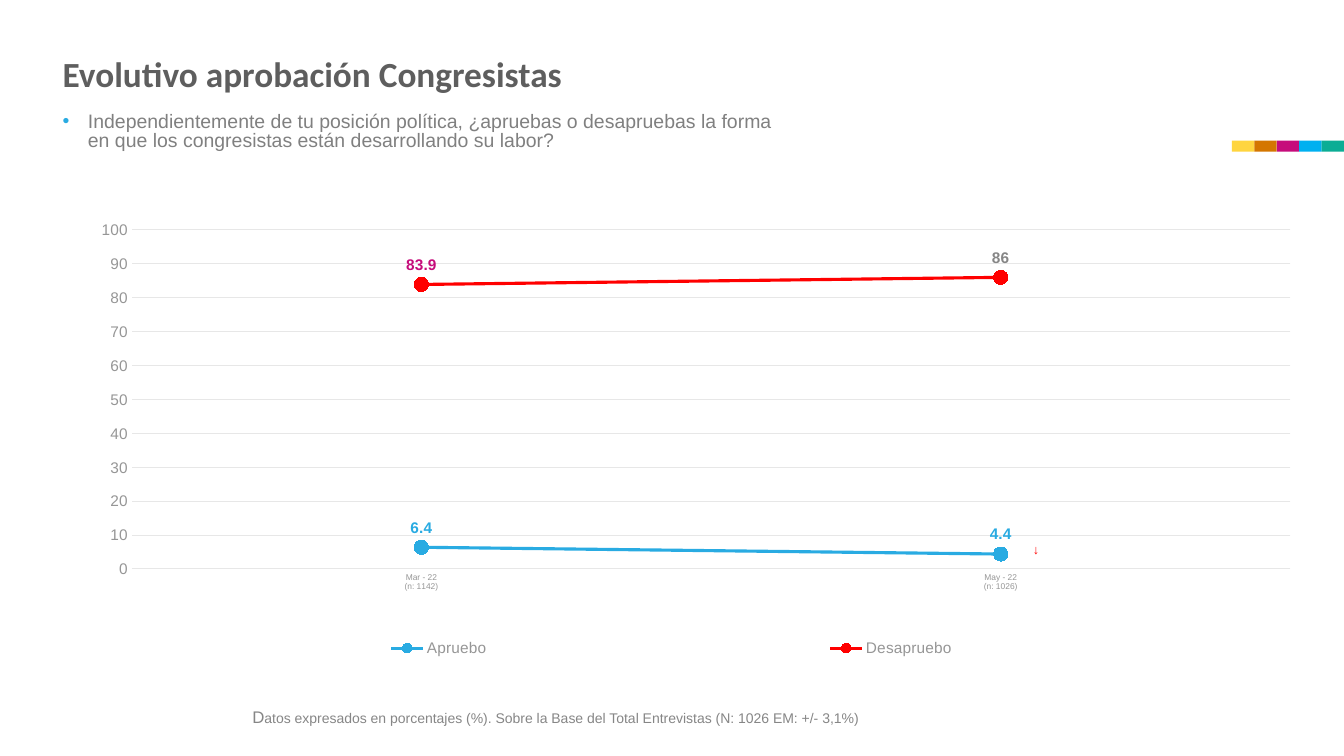
from lxml.etree import SubElement
from pptx import Presentation
from pptx.chart.data import CategoryChartData
from pptx.dml.color import RGBColor
from pptx.enum.chart import XL_CHART_TYPE as ChartType, XL_LABEL_POSITION as LabelPosition
from pptx.enum.chart import XL_LEGEND_POSITION as LegendPosition, XL_MARKER_STYLE as Marker
from pptx.enum.chart import XL_TICK_MARK as Tick
from pptx.enum.shapes import MSO_SHAPE as Shape
from pptx.enum.text import MSO_ANCHOR as Anchor, MSO_AUTO_SIZE as AutoSize, PP_ALIGN as Align
from pptx.oxml.ns import qn
from pptx.util import Inches, Pt

WIDTH, HEIGHT = 13.33, 7.5
COLUMNS, ROWS = 120, 75
DARK = RGBColor(0x5E, 0x5E, 0x5E)
GRAY = RGBColor(0x80, 0x80, 0x80)
NOTE = RGBColor(0x86, 0x86, 0x86)
AXIS = RGBColor(0x96, 0x96, 0x96)
GRID = RGBColor(0xE7, 0xE7, 0xE7)
SILVER = RGBColor(0xDD, 0xDD, 0xDD)
WHITE = RGBColor(0xFF, 0xFF, 0xFF)
BLUE = RGBColor(0x29, 0xAB, 0xE2)
RED = RGBColor(0xFF, 0x00, 0x00)
MAGENTA = RGBColor(0xC6, 0x0C, 0x7B)
TEAL = RGBColor(0x0B, 0xAD, 0x95)
STRIPES = (RGBColor(0xFF, 0xD5, 0x3F), RGBColor(0xD4, 0x76, 0x00), MAGENTA,
           RGBColor(0x00, 0xB0, 0xF0), TEAL)


class SurveySlide:
    """Draws survey elements on one slide, placed by grid columns and rows."""

    def __init__(self, deck):
        self.page = deck.slides.add_slide(deck.slide_layouts[1])
        self.shapes = self.page.shapes

    def place(self, column, row, columns, rows):
        across, down = WIDTH / COLUMNS, HEIGHT / ROWS
        return (Inches(column * across), Inches(row * down),
                Inches(columns * across), Inches(rows * down))

    def style(self, font, size, color, bold=False, name="Arial"):
        font.name, font.bold = name, bold
        font.color.rgb = color
        if size:
            font.size = Pt(size)

    def fill_placeholder(self, box, area, text, line_spacing):
        box.left, box.top, box.width, box.height = self.place(*area)
        frame = box.text_frame
        frame.text = text
        frame.word_wrap, frame.auto_size = True, AutoSize.NONE
        frame.vertical_anchor = Anchor.TOP
        para = frame.paragraphs[0]
        para.alignment, para.space_before = Align.LEFT, Pt(0)
        para.line_spacing = line_spacing
        return para

    def title(self, area, text):
        para = self.fill_placeholder(self.shapes.title, area, text, 0.9)
        self.style(para.font, 25.2, DARK, True, "Calibri")

    def question(self, area, text):
        para = self.fill_placeholder(self.page.placeholders[1], area, text, 0.8)
        props = para._p.get_or_add_pPr()
        props.set("marL", str(Inches(0.25)))
        props.set("indent", str(Inches(-0.25)))
        tint = SubElement(props, qn("a:buClr"))
        SubElement(tint, qn("a:srgbClr")).set("val", str(BLUE))
        SubElement(props, qn("a:buChar")).set("char", "•")
        self.style(para.font, 13.9, GRAY)

    def stripes(self, column, row, columns, rows, colors):
        for index, color in enumerate(colors):
            area = self.place(column + index * columns, row, columns, rows)
            stripe = self.shapes.add_shape(Shape.RECTANGLE, *area)
            stripe.shadow.inherit = False
            stripe.fill.solid()
            stripe.fill.fore_color.rgb = color
            stripe.line.fill.background()

    def set_layout(self, element, shares, inner=False):
        layout = element.find(qn("c:layout"))
        if layout is None:
            layout = SubElement(element, qn("c:layout"))
            anchor = element.find(qn("c:legendPos"))
            if anchor is None:
                element.insert(0, layout)
            else:
                anchor.addnext(layout)
        manual = SubElement(layout, qn("c:manualLayout"))
        values = [("layoutTarget", "inner")] if inner else []
        values += [("xMode", "edge"), ("yMode", "edge"), *zip("xywh", shares)]
        for tag, value in values:
            SubElement(manual, qn(f"c:{tag}")).set("val", str(value))

    def line_chart(self, area, categories, series):
        data = CategoryChartData()
        data.categories = categories
        for name, values, *_ in series:
            data.add_series(name, values)
        chart = self.shapes.add_chart(
            ChartType.LINE_MARKERS, *self.place(*area), data).chart
        chart.has_title = False
        self.style(chart.font, 11, DARK)
        self.axes(chart)
        self.legend(chart, [index for index, item in enumerate(series) if not item[-1]])
        plot = chart.plots[0]
        plot.vary_by_categories = False
        self.set_layout(chart._chartSpace.chart.plotArea, (0.064, 0.104, 0.936, 0.698), True)
        for line, (_, _, *colors) in zip(plot.series, series):
            self.series(line, *colors)
        return plot

    def legend(self, chart, unlisted):
        chart.has_legend = True
        legend = chart.legend
        legend.position, legend.include_in_layout = LegendPosition.BOTTOM, False
        self.style(legend.font, 11, AXIS)
        self.set_layout(legend._element, (0, 0.93, 1, 0.07))
        for index in unlisted:
            entry = SubElement(legend._element, qn("c:legendEntry"))
            SubElement(entry, qn("c:idx")).set("val", str(index))
            SubElement(entry, qn("c:delete")).set("val", "1")
            legend._element.find(qn("c:layout")).addprevious(entry)

    def axes(self, chart):
        for axis, size in ((chart.category_axis, 6), (chart.value_axis, 11)):
            axis.major_tick_mark = axis.minor_tick_mark = Tick.NONE
            self.style(axis.tick_labels.font, size, AXIS)
        scale = chart.value_axis
        scale.minimum_scale, scale.maximum_scale, scale.major_unit = 0, 100, 10
        scale.format.line.fill.background()
        for line in (scale.major_gridlines.format.line, chart.category_axis.format.line):
            line.color.rgb, line.width = GRID, Pt(0.75)

    def series(self, line, color, marker_color, label_color):
        line.smooth = False
        line.format.line.color.rgb, line.format.line.width = color, Pt(2.25)
        line.marker.style, line.marker.size = Marker.CIRCLE, 10
        line.marker.format.fill.solid()
        line.marker.format.fill.fore_color.rgb = marker_color
        line.marker.format.line.color.rgb = marker_color
        if label_color:
            labels = line.data_labels
            labels.show_value, labels.position = True, LabelPosition.ABOVE
            self.style(labels.font, 11, label_color, True)

    def highlight(self, point, color):
        label = point.data_label
        self.style(label.font, 11, color, True)
        label.position = LabelPosition.ABOVE

    def trend_table(self, column, row, symbol, color):
        table = self.shapes.add_table(1, 1, *self.place(column, row, 3.51, 11)).table
        table.first_row = table.horz_banding = False
        cell = table.cell(0, 0)
        cell.text, cell.vertical_anchor = symbol, Anchor.MIDDLE
        props = cell._tc.get_or_add_tcPr()
        for side in ("lnL", "lnR", "lnT", "lnB"):
            SubElement(SubElement(props, qn(f"a:{side}")), qn("a:noFill"))
        cell.fill.background()
        para = cell.text_frame.paragraphs[0]
        para.alignment = Align.CENTER
        self.style(para.font, 9, color, True)

    def footnote(self, area, spans):
        frame = self.shapes.add_textbox(*self.place(*area)).text_frame
        frame.word_wrap, frame.vertical_anchor = True, Anchor.MIDDLE
        para = frame.paragraphs[0]
        para.alignment = Align.RIGHT
        self.style(para.font, None, NOTE)
        for text, size in spans:
            span = para.add_run()
            span.text, span.font.size = text, Pt(size)


def main():
    deck = Presentation()
    deck.slide_width, deck.slide_height = Inches(WIDTH), Inches(HEIGHT)
    slide = SurveySlide(deck)
    slide.stripes(110, 13.94, 2, 1.1, STRIPES)
    slide.title((4.7, 5.2, 97.13, 5.2), "Evolutivo aprobación Congresistas")
    slide.question((4.7, 10.8, 65.53, 5.2),
                   "Independientemente de tu posición política, ¿apruebas o desapruebas "
                   "la forma en que los congresistas están desarrollando su labor?")
    plot = slide.line_chart((4.7, 17.8, 110.56, 48.2),
                            ("Mar - 22\n(n: 1142)", "May - 22\n(n: 1026)"),
                            (("Apruebo", (6.4, 4.4), BLUE, BLUE, BLUE),
                             ("Series 2", (None, None), TEAL, SILVER, None),
                             ("Desapruebo", (83.9, 86), RED, RED, NOTE)))
    slide.highlight(plot.series[2].points[0], MAGENTA)
    for trend in ((90.74, 49.1, "↓", RED), (115.3, 28.8, "-", WHITE), (115.2, 41.9, "-", WHITE)):
        slide.trend_table(*trend)
    slide.footnote((7.3, 69.6, 70.22, 3.1),
                   (("D", 12), ("atos expresados en porcentajes (%). Sobre la Base del Total "
                                "Entrevistas (N: 1026 EM: +/- 3,1%)", 10)))
    deck.save("out.pptx")


if __name__ == "__main__":
    main()
